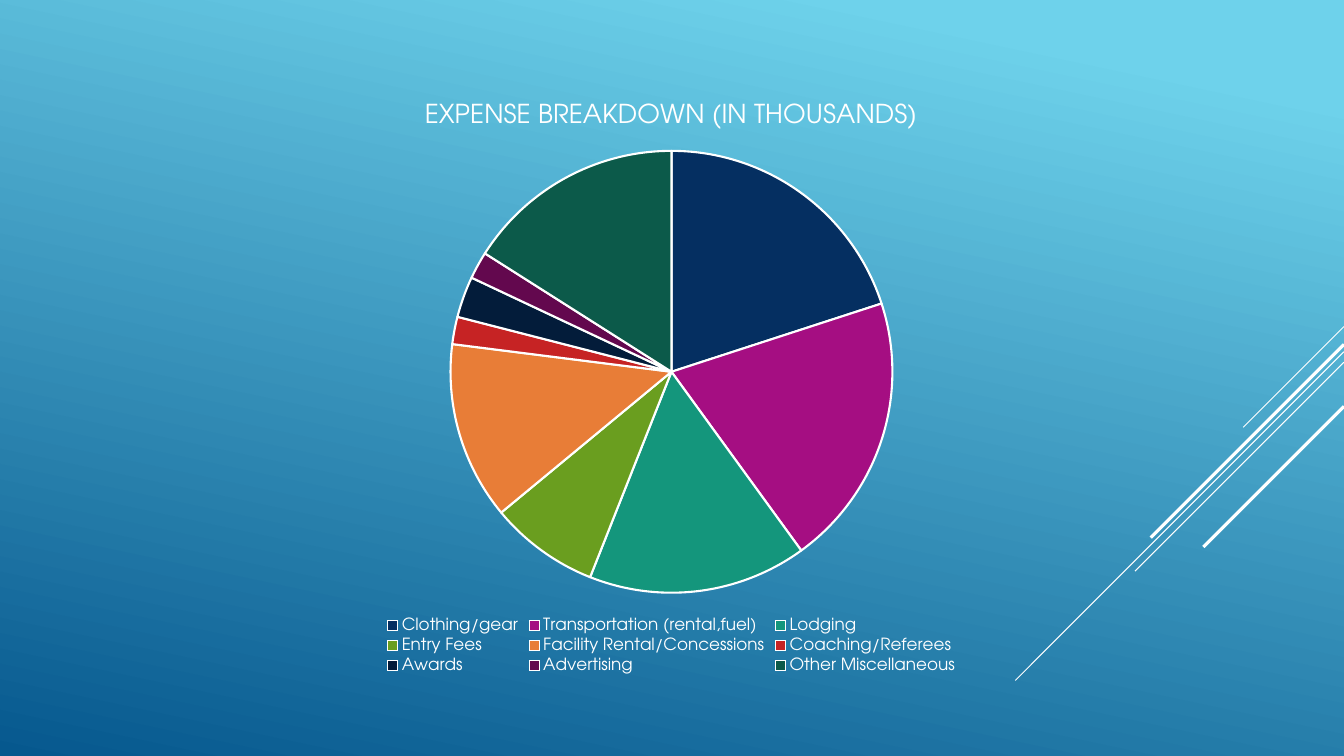
from dataclasses import dataclass

from lxml.etree import SubElement
from pptx import Presentation
from pptx.chart.data import CategoryChartData
from pptx.dml.color import RGBColor
from pptx.enum.chart import XL_CHART_TYPE, XL_LEGEND_POSITION
from pptx.enum.shapes import MSO_CONNECTOR
from pptx.oxml.ns import qn
from pptx.util import Emu, Pt

EMU_PER_PX = 9525
SLIDE_WIDTH, SLIDE_HEIGHT = 1280, 720


def px(length):
    return Emu(length * EMU_PER_PX)


@dataclass(frozen=True)
class Theme:
    font: str = "TeX Gyre Adventor"
    text: str = "FFFFFF"
    sky: str = "6ED2EB"
    deep: str = "06588E"
    title_size: float = 18.6
    legend_size: float = 12
    body_size: float = 10
    thin: float = 0.75
    thick: float = 2.25
    slice_border: float = 1.5


# Category, value, slice colour
EXPENSES = [
    ("Clothing/gear", 20, "052F61"),
    ("Transportation (rental,fuel)", 20, "A50E82"),
    ("Lodging", 16, "14967C"),
    ("Entry Fees", 8, "6A9E1F"),
    ("Facility Rental/Concessions", 13, "E87D37"),
    ("Coaching/Referees", 2, "C62324"),
    ("Awards", 3, "031C3A"),
    ("Advertising", 2, "63084E"),
    ("Other Miscellaneous", 16, "0C5A4A"),
]


class SlideBuilder:
    def __init__(self, slide, theme):
        self.slide = slide
        self.theme = theme

    def style_font(self, font, size):
        font.name = self.theme.font
        font.size = Pt(size)
        font.bold = False
        font.color.rgb = RGBColor.from_string(self.theme.text)

    def background(self):
        fill = self.slide.background.fill
        fill.gradient()
        fill.gradient_angle = 258
        stops = ((0.1, self.theme.sky), (1.0, self.theme.deep))
        for stop, (position, color) in zip(fill.gradient_stops, stops):
            stop.position = position
            stop.color.rgb = RGBColor.from_string(color)

    def diagonal(self, top, run, weight):
        """Draw a 45 degree streak down and left from the right edge."""
        streak = self.slide.shapes.add_connector(
            MSO_CONNECTOR.STRAIGHT, px(SLIDE_WIDTH), px(top),
            px(SLIDE_WIDTH - run), px(top + run))
        streak.line.color.rgb = RGBColor.from_string(self.theme.text)
        streak.line.width = Pt(weight)
        SubElement(streak._element.spPr, qn("a:effectLst"))

    def pie(self, title, rows, left, top, width, height):
        data = CategoryChartData()
        data.categories = [name for name, _, _ in rows]
        data.add_series(title, [value for _, value, _ in rows])
        chart = self.slide.shapes.add_chart(
            XL_CHART_TYPE.PIE, px(left), px(top), px(width), px(height),
            data).chart
        self.style_font(chart.font, self.theme.body_size)

        # Heading
        chart.has_title = True
        heading = chart.chart_title
        heading.include_in_layout = False
        heading.text_frame.text = title
        self.style_font(heading.text_frame.paragraphs[0].font,
                        self.theme.title_size)

        # Legend
        chart.has_legend = True
        chart.legend.position = XL_LEGEND_POSITION.BOTTOM
        chart.legend.include_in_layout = False
        self.style_font(chart.legend.font, self.theme.legend_size)

        # Slices
        plot = chart.plots[0]
        plot.vary_by_categories = True
        for index, (_, _, color) in enumerate(rows):
            slice_format = plot.series[0].points[index].format
            slice_format.fill.solid()
            slice_format.fill.fore_color.rgb = RGBColor.from_string(color)
            slice_format.line.color.rgb = RGBColor.from_string(self.theme.text)
            slice_format.line.width = Pt(self.theme.slice_border)


def main():
    deck = Presentation()
    deck.slide_width, deck.slide_height = px(SLIDE_WIDTH), px(SLIDE_HEIGHT)
    theme = Theme()
    # The heading belongs to the chart, so the blank layout fits
    builder = SlideBuilder(deck.slides.add_slide(deck.slide_layouts[6]), theme)
    builder.background()

    # Decorative streaks: top, run, weight
    for top, run, weight in (
        (311, 96, theme.thin),
        (335, 313, theme.thin),
        (345, 199, theme.thin),
        (328, 184, theme.thick),
        (387, 134, theme.thick),
    ):
        builder.diagonal(top, run, weight)

    # Expense chart
    builder.pie("EXPENSE BREAKDOWN (IN THOUSANDS)", EXPENSES,
                213, 76, 853, 569)
    deck.save("out.pptx")


if __name__ == "__main__":
    main()
